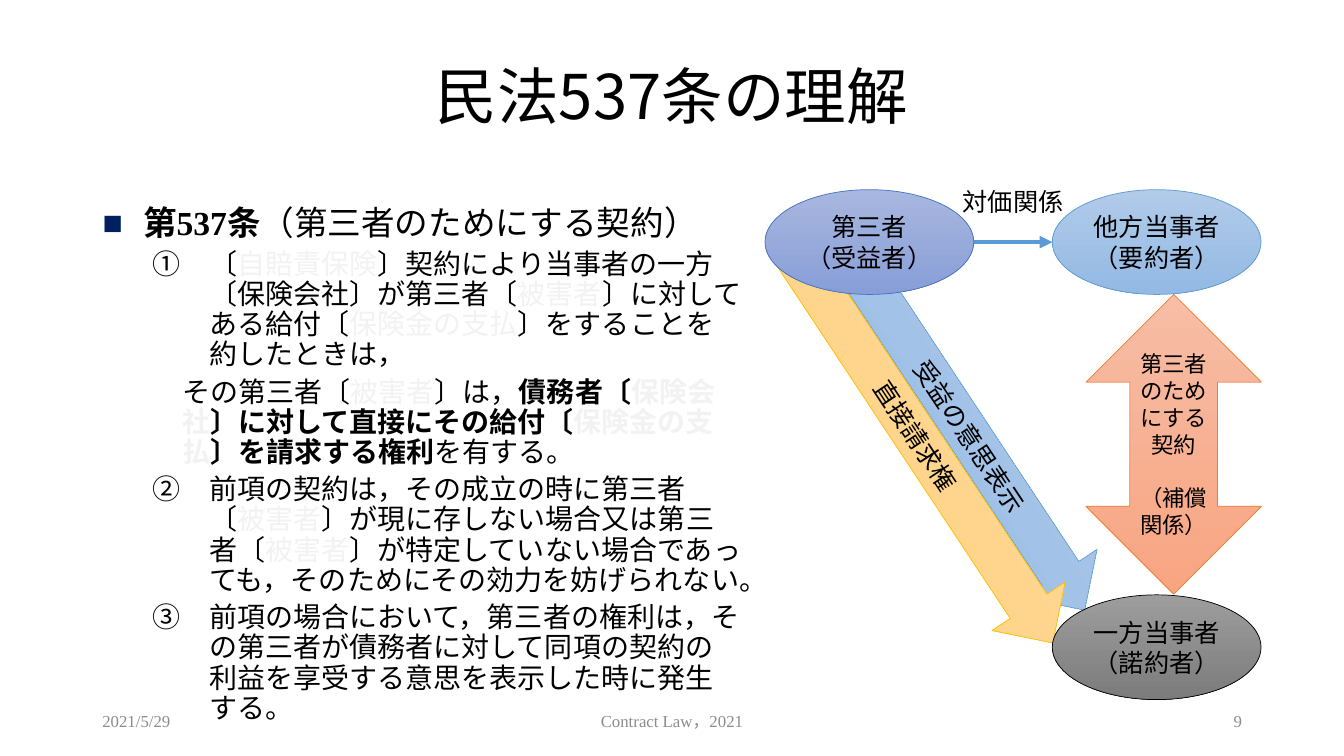
from dataclasses import dataclass
from typing import NamedTuple, Optional

import lxml.etree
import pptx
import pptx.dml.color
import pptx.enum.dml
import pptx.enum.shapes
import pptx.enum.text
import pptx.oxml.ns
import pptx.shapes.autoshape
import pptx.slide
import pptx.text.text
import pptx.util

Cm = pptx.util.Cm
Pt = pptx.util.Pt
RGBColor = pptx.dml.color.RGBColor
Align = pptx.enum.text.PP_ALIGN
Preset = pptx.enum.shapes.MSO_SHAPE
qn = pptx.oxml.ns.qn

GOTHIC = "Noto Sans CJK JP"
SERIF = "Times New Roman"

BLACK = RGBColor(0x00, 0x00, 0x00)
FAINT = RGBColor(0xF2, 0xF2, 0xF2)
FOOTER_GREY = RGBColor(0x8C, 0x8C, 0x8C)
NAVY = RGBColor(0x00, 0x20, 0x60)
BLUE = RGBColor(0x5B, 0x9B, 0xD5)
BLUE_TOP = RGBColor(0xB1, 0xCB, 0xE9)
BLUE_BOTTOM = RGBColor(0x93, 0xB9, 0xE4)
INDIGO = RGBColor(0x44, 0x72, 0xC4)
INDIGO_TOP = RGBColor(0xA8, 0xB7, 0xDF)
INDIGO_BOTTOM = RGBColor(0x88, 0x9E, 0xD7)
ORANGE = RGBColor(0xED, 0x7D, 0x31)
ORANGE_TOP = RGBColor(0xF7, 0xBD, 0xA5)
ORANGE_BOTTOM = RGBColor(0xF8, 0xA5, 0x82)
GOLD = RGBColor(0xFF, 0xC0, 0x00)
GOLD_TOP = RGBColor(0xFF, 0xDB, 0x9E)
GOLD_BOTTOM = RGBColor(0xFF, 0xD0, 0x7C)
GREY_TOP = RGBColor(0x9D, 0x9D, 0x9D)
GREY_BOTTOM = RGBColor(0x7C, 0x7C, 0x7C)


class Box(NamedTuple):
    left: float
    top: float
    width: float
    height: float


class Palette(NamedTuple):
    top: RGBColor
    bottom: RGBColor
    line: RGBColor


class Span(NamedTuple):
    text: str
    faint: bool = False
    bold: bool = False


@dataclass
class Clause:
    level: int
    spans: list[Span]


@dataclass
class Figure:
    preset: Preset
    box: Box
    palette: Palette
    lines: list[str]
    size: int = 18
    rotation: float = 0
    dashed: bool = False
    last_lines_gap: Optional[int] = None


class LevelStyle(NamedTuple):
    size: int
    margin: float
    indent: float
    space_before: int


LEVEL_STYLES = [LevelStyle(24, 1.02, -1.02, 10), LevelStyle(20, 2.69, -1.42, 5),
                LevelStyle(20, 2.01, 0, 5)]

CLAUSES = [
    Clause(0, [Span("第537条", bold=True), Span("（第三者のためにする契約）")]),
    Clause(1, [Span("〔"), Span("自賠責保険", True),
               Span("〕契約により当事者の一方〔保険会社〕が第三者〔"), Span("被害者", True),
               Span("〕に対してある給付〔"), Span("保険金の支払", True),
               Span("〕をすることを約したときは，")]),
    Clause(2, [Span("その第三者〔"), Span("被害者", True), Span("〕は，"),
               Span("債務者〔", bold=True), Span("保険会社", True, True),
               Span("〕に対して直接にその給付〔", bold=True), Span("保険金の支払", True, True),
               Span("〕を請求する権利", bold=True), Span("を有する。")]),
    Clause(1, [Span("前項の契約は，その成立の時に第三者〔"), Span("被害者", True),
               Span("〕が現に存しない場合又は第三者〔"), Span("被害者", True),
               Span("〕が特定していない場合であっても，そのためにその効力を妨げられない。")]),
    Clause(1, [Span("前項の場合において，第三者の権利は，その第三者が債務者に対して"
                    "同項の契約の利益を享受する意思を表示した時に発生する。")]),
]

PARTY_WIDTH, PARTY_HEIGHT = 5.26, 2.64
LEFT_PARTY, RIGHT_PARTY = 19.28, 26.52
UPPER_PARTY, LOWER_PARTY = 4.78, 14.99
ARROW_ROTATION = 56.5
BLUE_PALETTE = Palette(BLUE_TOP, BLUE_BOTTOM, BLUE)


def party(left: float, top: float, palette: Palette, lines: list[str]) -> Figure:
    return Figure(Preset.OVAL, Box(left, top, PARTY_WIDTH, PARTY_HEIGHT), palette, lines)


FIGURES_BEHIND = [
    Figure(Preset.UP_DOWN_ARROW, Box(27.37, 7.42, 4.42, 7.55),
           Palette(ORANGE_TOP, ORANGE_BOTTOM, ORANGE),
           ["第三者のためにする契約", "（補償", "関係）"], size=16, last_lines_gap=19),
    Figure(Preset.RIGHT_ARROW, Box(19.63, 10.13, 9.93, 2.21), BLUE_PALETTE,
           ["受益の意思表示"], rotation=ARROW_ROTATION, dashed=True),
    party(RIGHT_PARTY, UPPER_PARTY, BLUE_PALETTE, ["他方当事者（要約者）"]),
]
FIGURES_IN_FRONT = [
    Figure(Preset.RIGHT_ARROW, Box(17.25, 10.11, 11.96, 2.21),
           Palette(GOLD_TOP, GOLD_BOTTOM, GOLD), ["直接請求権"], rotation=ARROW_ROTATION),
    party(LEFT_PARTY, UPPER_PARTY, Palette(INDIGO_TOP, INDIGO_BOTTOM, INDIGO),
          ["第三者", "（受益者）"]),
    party(RIGHT_PARTY, LOWER_PARTY, Palette(GREY_TOP, GREY_BOTTOM, BLACK),
          ["一方当事者", "（諾約者）"]),
]


def place(shape: pptx.shapes.autoshape.Shape, box: Box) -> None:
    shape.left, shape.top, shape.width, shape.height = map(Cm, box)


def set_font(paragraph: pptx.text.text._Paragraph, size: int, latin: str = SERIF,
             color: RGBColor = BLACK) -> None:
    paragraph.font.size = Pt(size)
    paragraph.font.name = latin
    paragraph.font.color.rgb = color
    defaults = paragraph._p.pPr.find(qn("a:defRPr"))
    lxml.etree.SubElement(defaults, qn("a:ea"), typeface=GOTHIC)


def set_bullet(paragraph: pptx.text.text._Paragraph, level: int) -> None:
    """Square at the top level, circled numbers below it, nothing at the third."""
    properties = paragraph._p.get_or_add_pPr()
    if level == 2:
        lxml.etree.SubElement(properties, qn("a:buNone"))
        return
    color = lxml.etree.SubElement(properties, qn("a:buClr"))
    lxml.etree.SubElement(color, qn("a:srgbClr"), val=str(BLACK if level else NAVY))
    lxml.etree.SubElement(properties, qn("a:buFont"), typeface=GOTHIC if level else SERIF)
    if level:
        lxml.etree.SubElement(properties, qn("a:buAutoNum"), type="circleNumDbPlain")
    else:
        lxml.etree.SubElement(properties, qn("a:buChar"), char="■")


def fill_title(slide: pptx.slide.Slide) -> None:
    title = slide.shapes.title
    place(title, Box(2.33, 0.81, 29.21, 3.4))
    title.text_frame.text = "民法537条の理解"
    title.text_frame.vertical_anchor = pptx.enum.text.MSO_ANCHOR.MIDDLE
    paragraph = title.text_frame.paragraphs[0]
    paragraph.alignment = Align.CENTER
    paragraph.line_spacing = 0.9
    set_font(paragraph, 44, GOTHIC)


def fill_body(slide: pptx.slide.Slide) -> None:
    body = slide.placeholders[1]
    place(body, Box(2.33, 5.08, 16.59, 12.57))
    frame = body.text_frame
    frame.auto_size = pptx.enum.text.MSO_AUTO_SIZE.NONE
    for index, clause in enumerate(CLAUSES):
        paragraph = frame.add_paragraph() if index else frame.paragraphs[0]
        style = LEVEL_STYLES[clause.level]
        paragraph.level = clause.level
        set_bullet(paragraph, clause.level)
        paragraph.line_spacing = 0.9
        paragraph.space_before = Pt(style.space_before)
        properties = paragraph._p.get_or_add_pPr()
        properties.set("marL", str(Cm(style.margin)))
        properties.set("indent", str(Cm(style.indent)))
        set_font(paragraph, style.size)
        for span in clause.spans:
            run = paragraph.add_run()
            run.text = span.text
            if span.bold:
                run.font.bold = True
            if span.faint:
                run.font.color.rgb = FAINT


def add_label(slide: pptx.slide.Slide, box: Box, text: str, size: int,
              color: RGBColor, alignment: Align) -> None:
    frame = slide.shapes.add_textbox(*map(Cm, box)).text_frame
    frame.word_wrap = True
    frame.vertical_anchor = pptx.enum.text.MSO_ANCHOR.MIDDLE
    frame.text = text
    frame.paragraphs[0].alignment = alignment
    set_font(frame.paragraphs[0], size, color=color)


def add_figure(slide: pptx.slide.Slide, figure: Figure) -> None:
    shape = slide.shapes.add_shape(figure.preset, *map(Cm, figure.box))
    shape.rotation = figure.rotation
    shape.shadow.inherit = False
    shape.fill.gradient()
    shape.fill.gradient_angle = 270
    for stop, color in zip(shape.fill.gradient_stops, figure.palette):
        stop.color.rgb = color
    shape.line.color.rgb = figure.palette.line
    shape.line.width = Pt(0.5)
    if figure.dashed:
        shape.line.dash_style = pptx.enum.dml.MSO_LINE.SQUARE_DOT
    frame = shape.text_frame
    frame.vertical_anchor = pptx.enum.text.MSO_ANCHOR.MIDDLE
    frame.text = "\n".join(figure.lines)
    for paragraph in frame.paragraphs:
        paragraph.alignment = Align.CENTER
        set_font(paragraph, figure.size)
    if figure.last_lines_gap:
        frame.paragraphs[1].space_before = Pt(figure.last_lines_gap)


def add_consideration_arrow(slide: pptx.slide.Slide) -> None:
    middle = Cm(UPPER_PARTY + PARTY_HEIGHT / 2)
    arrow = slide.shapes.add_connector(
        pptx.enum.shapes.MSO_CONNECTOR.STRAIGHT,
        Cm(LEFT_PARTY + PARTY_WIDTH), middle, Cm(RIGHT_PARTY), middle)
    arrow.line.color.rgb = BLUE
    arrow.line.width = Pt(3)
    lxml.etree.SubElement(arrow.line._get_or_add_ln(), qn("a:tailEnd"), type="triangle")
    lxml.etree.SubElement(arrow._element.spPr, qn("a:effectLst"))


def main() -> None:
    presentation = pptx.Presentation()
    presentation.slide_width, presentation.slide_height = Cm(33.87), Cm(19.05)
    slide = presentation.slides.add_slide(presentation.slide_layouts[1])
    fill_title(slide)
    for left, width, text, alignment in [(2.33, 7.62, "2021/5/29", Align.LEFT),
                                         (11.22, 11.43, "Contract Law，2021", Align.CENTER),
                                         (23.93, 7.62, "9", Align.RIGHT)]:
        add_label(slide, Box(left, 17.65, width, 1.01), text, 12, FOOTER_GREY, alignment)
    fill_body(slide)
    for figure in FIGURES_BEHIND:
        add_figure(slide, figure)
    add_label(slide, Box(23.93, 4.57, 3.2, 1.02), "対価関係", 18, BLACK, Align.CENTER)
    add_consideration_arrow(slide)
    for figure in FIGURES_IN_FRONT:
        add_figure(slide, figure)
    presentation.save("out.pptx")


if __name__ == "__main__":
    main()
